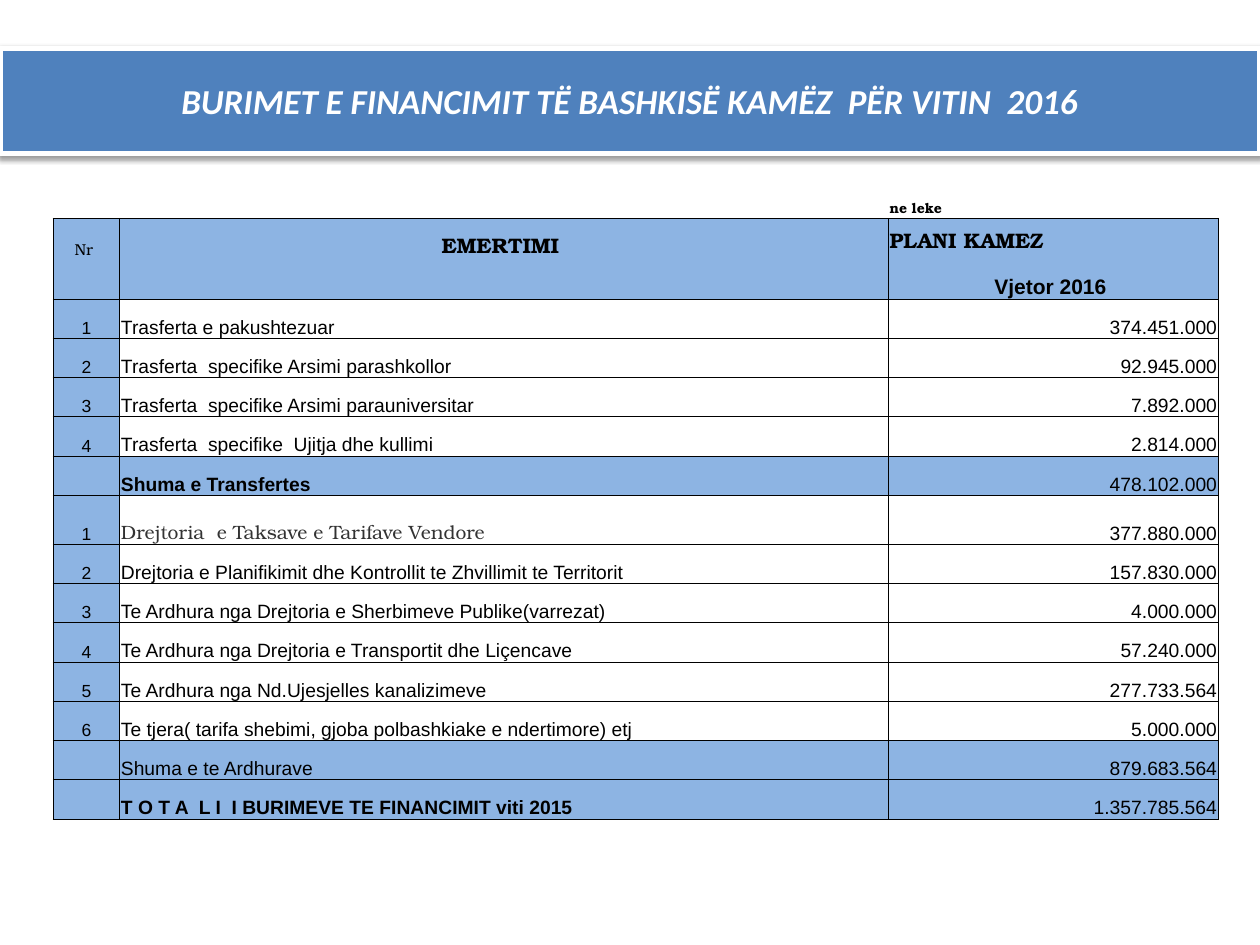
from dataclasses import dataclass
from typing import Optional

from lxml import etree
from pptx import Presentation
from pptx import util as u
from pptx.dml.color import RGBColor
from pptx.enum import text
from pptx.oxml import ns

COLORS = {
    "banner": "4F81BD",
    "band": "8DB4E3",
    "white": "FFFFFF",
    "black": "000000",
    "gray": "333333",
}
SERIF = "TeX Gyre Bonum"
LEFT, CENTER, RIGHT = text.PP_ALIGN.LEFT, text.PP_ALIGN.CENTER, text.PP_ALIGN.RIGHT
BOTTOM, MIDDLE = text.MSO_ANCHOR.BOTTOM, text.MSO_ANCHOR.MIDDLE


@dataclass
class CellStyle:
    size: float = 11
    align: text.PP_ALIGN = LEFT
    font: str = "Arial"
    color: str = "black"
    bold: bool = False
    anchor: text.MSO_ANCHOR = BOTTOM
    fill: Optional[str] = "white"
    borders: str = "LRTB"


@dataclass
class BudgetRow:
    number: str
    name: str
    amount: str
    total: bool = False
    bold: bool = False
    font: str = "Arial"
    color: str = "black"


BUDGET_ROWS = [
    BudgetRow("1", "Trasferta e pakushtezuar", "374.451.000"),
    BudgetRow("2", "Trasferta  specifike Arsimi parashkollor", "92.945.000"),
    BudgetRow("3", "Trasferta  specifike Arsimi parauniversitar", "7.892.000"),
    BudgetRow("4", "Trasferta  specifike  Ujitja dhe kullimi", "2.814.000"),
    BudgetRow("", "Shuma e Transfertes", "478.102.000", total=True, bold=True),
    BudgetRow("1", "Drejtoria  e Taksave e Tarifave Vendore", "377.880.000",
              font=SERIF, color="gray"),
    BudgetRow("2", "Drejtoria e Planifikimit dhe Kontrollit te Zhvillimit te Territorit",
              "157.830.000"),
    BudgetRow("3", "Te Ardhura nga Drejtoria e Sherbimeve Publike(varrezat)", "4.000.000"),
    BudgetRow("4", "Te Ardhura nga Drejtoria e Transportit dhe Liçencave", "57.240.000"),
    BudgetRow("5", "Te Ardhura nga Nd.Ujesjelles kanalizimeve", "277.733.564"),
    BudgetRow("6", "Te tjera( tarifa shebimi, gjoba polbashkiake e ndertimore) etj",
              "5.000.000"),
    BudgetRow("", "Shuma e te Ardhurave", "879.683.564", total=True),
    BudgetRow("", "T O T A  L I  I BURIMEVE TE FINANCIMIT viti 2015", "1.357.785.564",
              total=True, bold=True),
]
COLUMN_WIDTHS = [0.53, 6.1, 2.62]
TABLE_HEIGHT = 5.08
TALL_ROWS = {1: 0.33, 8: 0.39}
HEADER_ROWS = 3


def rgb(name: str) -> RGBColor:
    return RGBColor.from_string(COLORS[name])


def add_element(parent, tag: str, **attributes: str):
    element = etree.SubElement(parent, ns.qn(tag))
    for key, value in attributes.items():
        element.set(key, value)
    return element


def add_run(paragraph, words: str, style: CellStyle, italic: bool = False) -> None:
    run = paragraph.add_run()
    run.text = words
    run.font.name = style.font
    run.font.size = u.Pt(style.size)
    run.font.bold = style.bold
    run.font.italic = italic
    run.font.color.rgb = rgb(style.color)


def add_borders(cell, sides: str) -> None:
    properties = cell._tc.get_or_add_tcPr()
    for side in "LRTB":
        line = add_element(properties, f"a:ln{side}", w=str(u.Pt(0.5)))
        if side in sides:
            solid = add_element(line, "a:solidFill")
            add_element(solid, "a:srgbClr", val=COLORS["black"])
        else:
            add_element(line, "a:noFill")


def write_cell(cell, words: str, style: CellStyle) -> None:
    cell.margin_left = cell.margin_right = cell.margin_top = u.Inches(0.01)
    cell.margin_bottom = 0
    cell.vertical_anchor = style.anchor
    add_borders(cell, style.borders)
    if style.fill:
        cell.fill.solid()
        cell.fill.fore_color.rgb = rgb(style.fill)
    else:
        cell.fill.background()
    paragraph = cell.text_frame.paragraphs[0]
    paragraph.alignment = style.align
    if words:
        add_run(paragraph, words, style)
    else:
        add_element(paragraph._p, "a:endParaRPr", sz=str(int(style.size * 100)))


def add_banner(slide, words: str) -> None:
    title = slide.shapes.title
    title.left, title.top = u.Inches(0), u.Inches(0.58)
    title.width, title.height = u.Inches(10), u.Inches(0.44)
    title.fill.solid()
    title.fill.fore_color.rgb = rgb("banner")
    title.line.color.rgb = rgb("white")
    title.line.width = u.Pt(3)
    effects = add_element(title._element.spPr, "a:effectLst")
    shadow = add_element(effects, "a:outerShdw", blurRad=str(u.Pt(3.1)),
                         dist=str(u.Pt(1.6)), dir="5400000", rotWithShape="0")
    shade = add_element(shadow, "a:srgbClr", val=COLORS["black"])
    add_element(shade, "a:alpha", val="38000")
    frame = title.text_frame
    frame.word_wrap = True
    frame.auto_size = text.MSO_AUTO_SIZE.SHAPE_TO_FIT_TEXT
    frame.vertical_anchor = MIDDLE
    paragraph = frame.paragraphs[0]
    paragraph.alignment = CENTER
    style = CellStyle(size=20, font="Calibri", color="white", bold=True)
    add_run(paragraph, words, style, italic=True)


def write_header(table) -> None:
    blank = CellStyle(size=8, fill=None, borders="B")
    upper = dict(fill="band", borders="LRT", font=SERIF)
    lower = dict(fill="band", borders="LRB", size=12, align=CENTER, bold=True)
    header = [
        [("", blank), ("", blank),
         ("ne leke", CellStyle(size=8, font=SERIF, bold=True, fill=None, borders="B"))],
        [("Nr ", CellStyle(size=9, align=CENTER, **upper)),
         ("EMERTIMI ", CellStyle(size=12, align=CENTER, bold=True, **upper)),
         ("PLANI KAMEZ", CellStyle(size=12, bold=True, anchor=MIDDLE, **upper))],
        [("", CellStyle(**lower)), ("", CellStyle(**lower)),
         ("Vjetor 2016 ", CellStyle(**lower))],
    ]
    for row_index, row in enumerate(header):
        for column_index, (words, style) in enumerate(row):
            write_cell(table.cell(row_index, column_index), words, style)


def write_budget_row(table, index: int, row: BudgetRow) -> None:
    fill = "band" if row.total else "white"
    write_cell(table.cell(index, 0), row.number,
               CellStyle(size=10, align=CENTER, fill="band"))
    write_cell(table.cell(index, 1), row.name,
               CellStyle(font=row.font, color=row.color, bold=row.bold, fill=fill))
    write_cell(table.cell(index, 2), row.amount, CellStyle(align=RIGHT, fill=fill))


def add_budget_table(slide) -> None:
    count = HEADER_ROWS + len(BUDGET_ROWS)
    table = slide.shapes.add_table(
        count, len(COLUMN_WIDTHS), u.Inches(0.42), u.Inches(1.42),
        u.Inches(sum(COLUMN_WIDTHS)), u.Inches(TABLE_HEIGHT)).table
    table.first_row = table.horz_banding = False
    for column, width in zip(table.columns, COLUMN_WIDTHS):
        column.width = u.Inches(width)
    plain_height = (TABLE_HEIGHT - sum(TALL_ROWS.values())) / (count - len(TALL_ROWS))
    for index, row in enumerate(table.rows):
        row.height = u.Inches(TALL_ROWS.get(index, plain_height))
    write_header(table)
    for index, budget_row in enumerate(BUDGET_ROWS, HEADER_ROWS):
        write_budget_row(table, index, budget_row)


def main() -> None:
    presentation = Presentation()
    presentation.slide_width, presentation.slide_height = u.Inches(10), u.Inches(7.5)
    slide = presentation.slides.add_slide(presentation.slide_layouts[5])
    add_banner(slide, "BURIMET E FINANCIMIT TË BASHKISË KAMËZ  PËR VITIN  2016")
    add_budget_table(slide)
    presentation.save("out.pptx")


if __name__ == "__main__":
    main()
